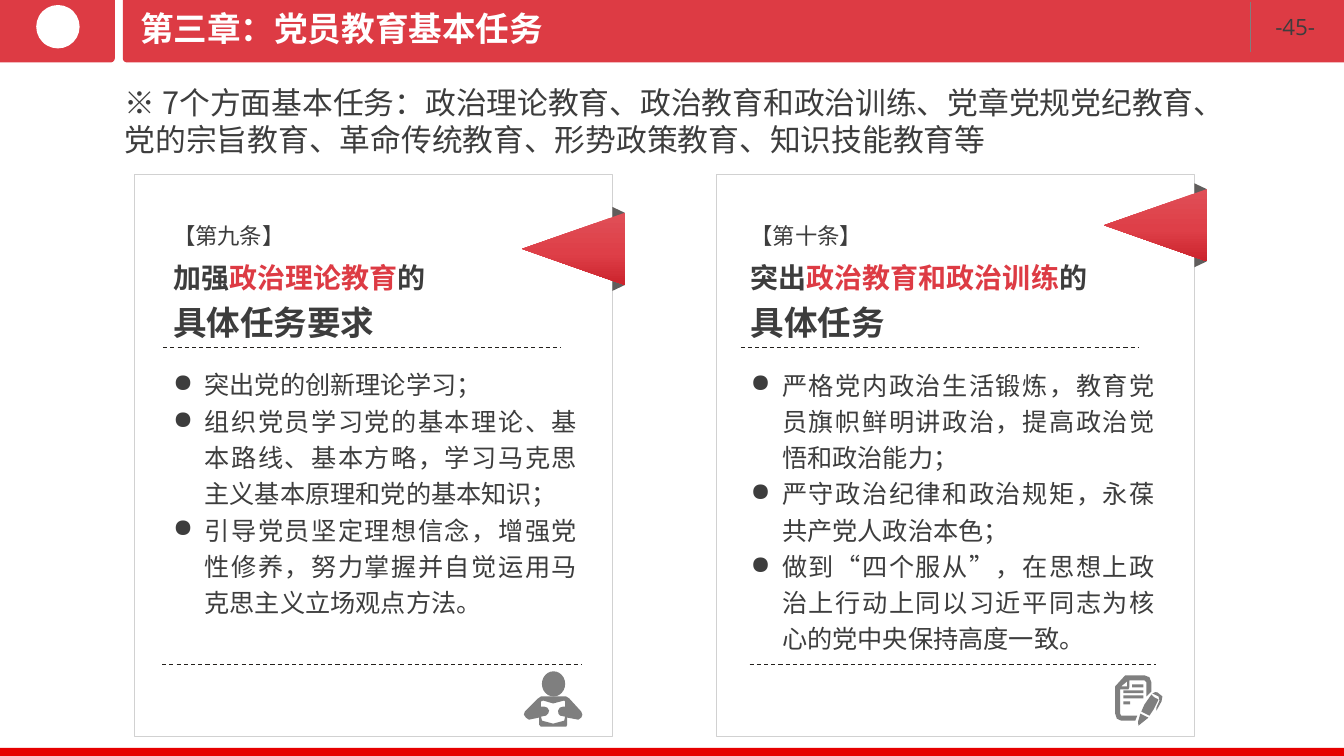
import math
from dataclasses import dataclass
from typing import Sequence

import lxml.etree
import pptx
import pptx.dml.color
import pptx.enum.dml
import pptx.enum.lang
import pptx.enum.shapes
import pptx.enum.text
import pptx.oxml
import pptx.oxml.ns
import pptx.util

Pt = pptx.util.Pt
qn = pptx.oxml.ns.qn
Align = pptx.enum.text.PP_ALIGN
Anchor = pptx.enum.text.MSO_ANCHOR
Preset = pptx.enum.shapes.MSO_SHAPE
Point = tuple[float, float]
Box = tuple[float, float, float, float]


@dataclass(frozen=True)
class Theme:
    red: str = "DD3B44"
    footer_red: str = "E60000"
    white: str = "FFFFFF"
    ink: str = "3D3D3D"
    dash: str = "24211D"
    border: str = "D1D1D1"
    fold: str = "605D5C"
    gray: str = "7F7F7F"
    ribbon: tuple = ((0, "E04F57"), (0.56, "DE3F48"), (1, "CB232C"))
    font: str = "Noto Sans CJK SC"
    title_font: str = "Arial"
    number_font: str = "Open Sans"
    title: float = 24
    summary: float = 22
    heading: float = 20
    body: float = 18
    label: float = 16


@dataclass(frozen=True)
class Run:
    text: str
    color: str
    size: float


@dataclass(frozen=True)
class Card:
    left: float
    text_left: float
    article: str
    heading: tuple[str, str, str]
    subject: str
    duties: tuple[str, ...]
    duties_height: float
    fold: Point
    footer: Point


THEME = Theme()
CARDS = (
    Card(95.8, 116.6, "【第九条】", ("加强", "政治理论教育", "的"), "具体任务要求",
         ("突出党的创新理论学习；",
          "组织党员学习党的基本理论、基本路线、基本方略，学习马克思主义基本原理和党的基本知识；",
          "引导党员坚定理想信念，增强党性修养，努力掌握并自觉运用马克思主义立场观点方法。"),
         188, (437.6, 147.8), (115.9, 415.4)),
    Card(511.9, 529.4, "【第十条】", ("突出", "政治教育和政治训练", "的"), "具体任务",
         ("严格党内政治生活锻炼，教育党员旗帜鲜明讲政治，提高政治觉悟和政治能力；",
          "严守政治纪律和政治规矩，永葆共产党人政治本色；",
          "做到“四个服从”，在思想上政治上行动上同以习近平同志为核心的党中央保持高度一致。"),
         214.6, (853.5, 130.9), (535.7, 825.8)),
)


def rectangle(left: float, top: float, right: float, bottom: float) -> list[Point]:
    return [(left, top), (right, top), (right, bottom), (left, bottom)]


# Icon outlines, measured from each icon's top left corner
READER = (
    [(0.7, 28.8), (10.1, 19.4), (12.2, 18), (30.2, 18), (32.4, 19.4), (41, 28.8), (41.8, 31),
     (41, 33.1), (38.9, 34.6), (31, 33.1), (31, 38.2), (30.2, 39.6), (12.2, 39.6),
     (10.8, 38.2), (10.8, 33.1), (3.6, 34.6), (1.4, 33.1), (0, 31)],
    [(29.5, 25.2), (28.1, 25.2), (25.6, 26), (24.5, 28.1), (24.6, 30.2), (25.9, 31.7),
     (29.5, 32.4), (28.8, 35.3), (20.9, 37.4), (13, 35.3), (12.2, 32.4), (15.8, 31.7),
     (17.4, 30.2), (18, 28.1), (16.8, 26), (14.4, 25.2), (12.2, 25.2), (12.2, 21.6),
     (13.7, 20.9), (20.9, 23), (28.8, 20.9), (29.5, 21.6)],
)
NOTES = (
    [(7.2, 0), (20.9, 0), (24.5, 1.4), (25.9, 5), (25.9, 11.5), (22.3, 15.1), (22.3, 5),
     (20.9, 3.6), (10.1, 3.6), (10.1, 8.6), (9.4, 10.1), (3.6, 10.1), (3.6, 27.4),
     (4.3, 28.8), (15.8, 28.8), (14.4, 32.4), (4.3, 32.4), (1.2, 31), (0, 27.4), (0, 7.9)],
    [(31, 17.3), (27.4, 24.5), (24.5, 28.8), (21.6, 27.4), (18.7, 25.9), (20.9, 20.9),
     (25.9, 13.7), (28.1, 15.8)],
    [(23.8, 30.2), (16.6, 36), (16.4, 33), (18, 27.4)],
    [(26.6, 13), (28.5, 12), (30.2, 12.2), (33.8, 15.1), (33.1, 18.7), (29.5, 25.2),
     (29.5, 23), (31.7, 18), (31, 15.1)],
    [(4.3, 7.9), (8.6, 4.3), (8.6, 7.9)],
    rectangle(12.2, 6.5, 20.2, 8.6),
    *(rectangle(5.8, top, right, top + 2) for top, right in ((10.8, 20.2), (14.4, 20.2), (18.7, 10.8))),
)


def rgb(color: str) -> pptx.dml.color.RGBColor:
    return pptx.dml.color.RGBColor.from_string(color)


def paint(shape, fill: str, line: str | None = None) -> None:
    shape.shadow.inherit = False
    shape.fill.solid()
    shape.fill.fore_color.rgb = rgb(fill)
    if line:
        shape.line.color.rgb = rgb(line)
        shape.line.width = Pt(0.75)
    else:
        shape.line.fill.background()


def add_preset(slide, preset, box: Box, fill: str, line: str | None = None) -> None:
    paint(slide.shapes.add_shape(preset, *map(Pt, box)), fill, line)


def add_outline(slide, contours: Sequence[Sequence[Point]], fill: str, origin: Point = (0, 0)):
    placed = [[(Pt(origin[0] + x), Pt(origin[1] + y)) for x, y in contour] for contour in contours]
    builder = slide.shapes.build_freeform(*placed[0][0])
    for index, contour in enumerate(placed):
        if index:
            builder.move_to(*contour[0])
        builder.add_line_segments(contour[1:], close=True)
    shape = builder.convert_to_shape()
    paint(shape, fill)
    return shape


def add_line(slide, start: Point, end: Point, color: str, dashed: bool = False) -> None:
    connector = slide.shapes.add_connector(
        pptx.enum.shapes.MSO_CONNECTOR.STRAIGHT, *map(Pt, (*start, *end)))
    connector.line.color.rgb = rgb(color)
    connector.line.width = Pt(0.75)
    if dashed:
        connector.line.dash_style = pptx.enum.dml.MSO_LINE.DASH
    lxml.etree.SubElement(connector.element.spPr, qn("a:effectLst"))


def write_text(shape, box: Box, paragraphs: Sequence[Sequence[Run]], *, font: str = THEME.font,
               bold: bool = False, align=Align.LEFT, anchor=Anchor.TOP,
               spacing: float = 1.0, bullet: str = "", wrap: bool = True) -> None:
    shape.left, shape.top, shape.width, shape.height = map(Pt, box)
    frame = shape.text_frame
    frame.word_wrap = wrap
    frame.auto_size = pptx.enum.text.MSO_AUTO_SIZE.NONE
    frame.vertical_anchor = anchor
    for index, runs in enumerate(paragraphs):
        paragraph = frame.add_paragraph() if index else frame.paragraphs[0]
        paragraph.alignment = align
        paragraph.line_spacing = spacing
        if bullet:
            properties = paragraph._p.get_or_add_pPr()
            properties.set("marL", str(Pt(22.5)))
            properties.set("indent", str(-Pt(22.5)))
            lxml.etree.SubElement(properties, qn("a:buChar")).set("char", bullet)
        for item in runs:
            run = paragraph.add_run()
            run.text = item.text
            run.font.size = Pt(item.size)
            run.font.bold = bold
            run.font.color.rgb = rgb(item.color)
            run.font.name = font
            run.font.language_id = pptx.enum.lang.MSO_LANGUAGE_ID.SIMPLIFIED_CHINESE
            east_asian = lxml.etree.SubElement(run._r.get_or_add_rPr(), qn("a:ea"))
            east_asian.set("typeface", font)


def add_text(slide, box: Box, paragraphs: Sequence[Sequence[Run]], **text_format) -> None:
    write_text(slide.shapes.add_textbox(*map(Pt, box)), box, paragraphs, **text_format)


def add_header_panel(slide, left: float, right: float, rounded_right: bool) -> None:
    top, bottom, radius = -2, 44.6, 3
    arc = [(radius * (1 - math.cos(math.radians(a))), radius * (1 - math.sin(math.radians(a))))
           for a in range(0, 91, 15)]
    if rounded_right:
        points = [(left, bottom), (left, top), (right, top)]
        points += [(right - x, bottom - y) for x, y in arc]
    else:
        points = [(right, bottom), (right, top), (left, top)]
        points += [(left + x, bottom - y) for x, y in arc]
    add_outline(slide, [points], THEME.red)


def add_ribbon(slide, x: float, y: float) -> None:
    add_outline(slide, [[(x + 8.9, y + 4.2), (x, y), (x, y + 60), (x + 8.9, y + 55.8)]], THEME.fold)
    flag = add_outline(
        slide, [[(x - 64.6, y + 30), (x + 8.9, y + 4.2), (x + 8.9, y + 55.8)]], THEME.red)
    flag.fill.gradient()
    flag.fill.gradient_angle = 270
    stop_list = flag.element.spPr.find(".//" + qn("a:gsLst"))
    for stop in list(stop_list):
        stop_list.remove(stop)
    for position, color in THEME.ribbon:
        stop = lxml.etree.SubElement(stop_list, qn("a:gs"))
        stop.set("pos", str(round(position * 100000)))
        lxml.etree.SubElement(stop, qn("a:srgbClr")).set("val", color)


def add_card(slide, card: Card) -> None:
    add_preset(slide, Preset.RECTANGLE, (card.left, 124.6, 342, 401.8), THEME.white, THEME.border)
    add_ribbon(slide, *card.fold)
    left = card.text_left
    add_line(slide, (left, 248.4), (left + 284, 248.4), THEME.dash, dashed=True)
    colors = (THEME.ink, THEME.red, THEME.ink)
    heading = [Run(text, color, THEME.heading) for text, color in zip(card.heading, colors)]
    subject = [Run(card.subject, THEME.ink, THEME.title)]
    add_text(slide, (left, 177.8, 282.2, 68.4), [heading, subject], bold=True, spacing=1.2)
    add_text(slide, (left, 256.3, 303.1, card.duties_height),
             [[Run(duty, THEME.ink, THEME.body)] for duty in card.duties],
             align=Align.JUSTIFY, spacing=1.2, bullet="●")
    add_text(slide, (left, 154.8, 95, 26.6), [[Run(card.article, THEME.ink, THEME.label)]])
    add_line(slide, (card.footer[0], 474.5), (card.footer[1], 474.5), THEME.dash, dashed=True)


def main() -> None:
    presentation = pptx.Presentation()
    presentation.slide_width, presentation.slide_height = Pt(960.48), Pt(540)
    slide = presentation.slides.add_slide(presentation.slide_layouts[5])

    # Header and footer bands
    add_header_panel(slide, 0, 82.1, rounded_right=True)
    add_header_panel(slide, 87.8, 960.48, rounded_right=False)
    add_preset(slide, Preset.OVAL, (25.9, 3.6, 31, 31), THEME.white)
    add_text(slide, (904.3, 5.8, 46.1, 26.6), [[Run("-45-", THEME.ink, THEME.label)]],
             font=THEME.number_font, wrap=False)
    add_line(slide, (893.5, 1.4), (893.5, 37.4), THEME.gray)
    add_preset(slide, Preset.RECTANGLE, (0, 534.2, 960.48, 5.8), THEME.footer_red)

    # Title, brought in front of its band
    title = slide.shapes.title
    write_text(title, (92.9, 0, 649.4, 39.6),
               [[Run("第三章：党员教育基本任务", THEME.white, THEME.title)]],
               font=THEME.title_font, bold=True, anchor=Anchor.MIDDLE)
    title.element.getparent().append(title.element)

    # Cards and their icons
    for card in CARDS:
        add_card(slide, card)
    add_preset(slide, Preset.OVAL, (387.3, 479.5, 16.6, 18), THEME.gray)
    add_outline(slide, READER, THEME.gray, (374.4, 479.5))
    add_outline(slide, NOTES, THEME.gray, (797, 482.4))

    # Summary
    summary = ("※ 7个方面基本任务：政治理论教育、政治教育和政治训练、党章党规党纪教育、"
               "党的宗旨教育、革命传统教育、形势政策教育、知识技能教育等")
    add_text(slide, (82.1, 56.2, 807.1, 60.5), [[Run(summary, THEME.ink, THEME.summary)]])

    presentation.save("out.pptx")


if __name__ == "__main__":
    main()
